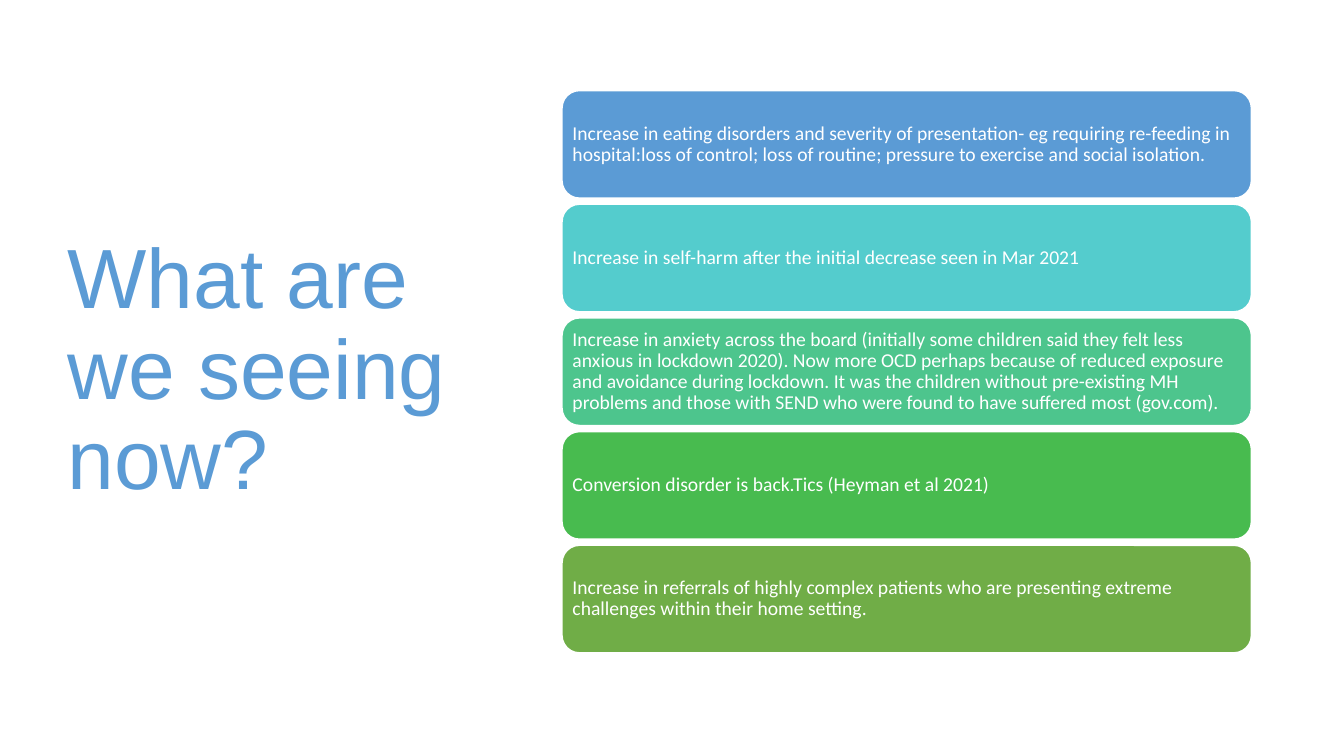
from pptx import Presentation
from pptx.dml.color import RGBColor as RGB
from pptx.enum.shapes import MSO_SHAPE as SHAPE
from pptx.enum.text import MSO_ANCHOR as ANCHOR, MSO_AUTO_SIZE as AUTO, PP_ALIGN as ALIGN
from pptx.util import Pt

COLORS = {
    "white": "FFFFFF",
    "blue": "5B9BD5",
    "teal": "54CCCD",
    "mint": "4DC58D",
    "green": "48BB4F",
    "olive": "70AD47",
}

FINDINGS = [
    ("blue", "Increase in eating disorders and severity of presentation- eg requiring "
             "re-feeding in hospital:loss of control; loss of routine; pressure to "
             "exercise and social isolation."),
    ("teal", "Increase in self-harm after the initial decrease seen in Mar 2021"),
    ("mint", "Increase in anxiety across the board (initially some children said they "
             "felt less anxious in lockdown 2020). Now more OCD perhaps because of "
             "reduced exposure and avoidance during lockdown. It was the children "
             "without pre-existing MH problems and those with SEND who were found to "
             "have suffered most (gov.com)."),
    ("green", "Conversion disorder is back.Tics (Heyman et al 2021)"),
    ("olive", "Increase in referrals of highly complex patients who are presenting "
              "extreme challenges within their home setting."),
]

BAR_LEFT, BAR_TOP, BAR_WIDTH, BAR_HEIGHT = 401, 64.2, 493.4, 77.8
BAR_PITCH = 81.2


class SlideBuilder:
    title_font, title_size = "Arial", 60
    body_font, body_size = "Calibri", 14
    line_spacing = 0.9
    inset = 4.2

    def __init__(self, slide):
        self.slide = slide

    def set_text(self, tf, text, font, size, color):
        tf.text = text
        tf.word_wrap = True
        tf.auto_size = AUTO.NONE
        tf.vertical_anchor = ANCHOR.MIDDLE
        p = tf.paragraphs[0]
        p.alignment = ALIGN.LEFT
        p.line_spacing = self.line_spacing
        r = p.runs[0]
        r.font.name = font
        r.font.size = Pt(size)
        r.font.color.rgb = RGB.from_string(COLORS[color])

    def title(self, text, left, top, width, height):
        sp = self.slide.shapes.title
        sp.left, sp.top, sp.width, sp.height = map(Pt, (left, top, width, height))
        self.set_text(sp.text_frame, text, self.title_font, self.title_size, "blue")

    def bar(self, text, color, left, top, width, height):
        sp = self.slide.shapes.add_shape(
            SHAPE.ROUNDED_RECTANGLE, *map(Pt, (left, top, width, height)))
        sp.shadow.inherit = False
        sp.fill.solid()
        sp.fill.fore_color.rgb = RGB.from_string(COLORS[color])
        sp.line.color.rgb = RGB.from_string(COLORS["white"])
        sp.line.width = Pt(2)
        tf = sp.text_frame
        tf.margin_left = tf.margin_right = tf.margin_top = tf.margin_bottom = Pt(self.inset)
        self.set_text(tf, text, self.body_font, self.body_size, "white")


def main():
    prs = Presentation()
    prs.slide_width, prs.slide_height = Pt(960), Pt(540)
    builder = SlideBuilder(prs.slides.add_slide(prs.slide_layouts[5]))
    builder.title("What are we seeing now?", 41, 49, 299.5, 433.4)
    for i, (color, text) in enumerate(FINDINGS):
        builder.bar(text, color, BAR_LEFT, BAR_TOP + i * BAR_PITCH, BAR_WIDTH, BAR_HEIGHT)
    prs.save("out.pptx")


if __name__ == "__main__":
    main()
